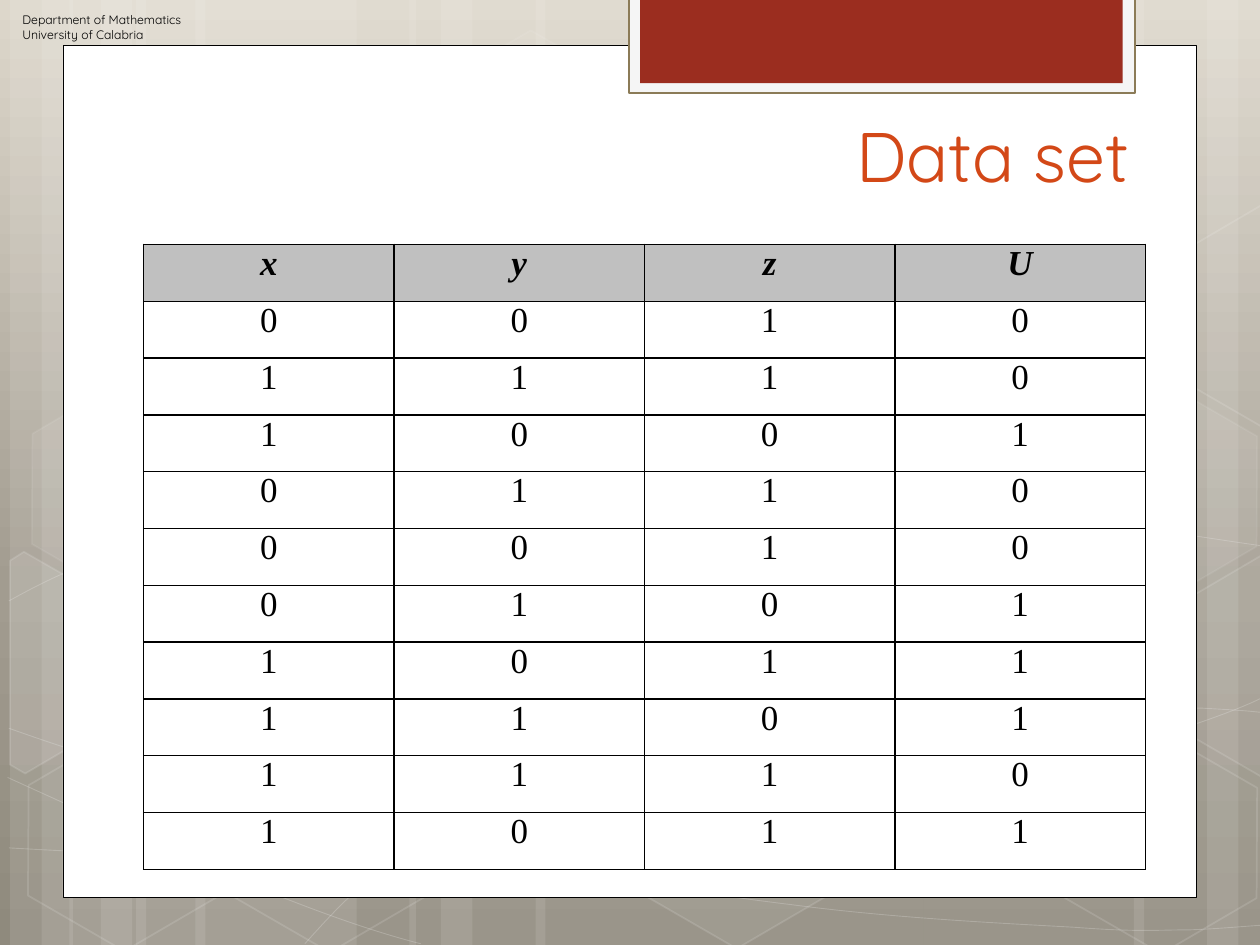
from lxml import etree
from copy import deepcopy
from pptx import Presentation
from pptx import util as u
from pptx.dml import color
from pptx.enum import shapes, text
from pptx.oxml import ns

PX = 9144  # 100 px to the inch
WIDE, HIGH = 1000, 750
SHAPE = shapes.MSO_SHAPE
SANS, SERIF = "Quicksand", "Times New Roman"
WHITE, BLACK = "FFFFFF", "000000"

BANDS = [(108, 175), (8, 50), (33, 83), (155, 175), (55, 50), (80, 83),
         (733, 175), (958, 50), (900, 83), (425, 308), (325, 50), (350, 83)]

# Each curve: a start, then three Bezier points for every stretch
CURVES = [
    [(7, 673), (61, 676), (115, 679), (190, 678), (265, 677), (358, 675), (458, 665),
     (558, 655), (700, 636), (792, 617), (883, 598), (977, 568), (1007, 551)],
    [(7, 477), (36, 461), (65, 446), (121, 431), (178, 416), (259, 394), (347, 387),
     (436, 380), (544, 379), (654, 387), (764, 395), (947, 426), (1007, 434)],
    [(6, 617), (127, 672), (247, 727), (334, 749)],
    [(7, 578), (38, 589), (70, 600), (128, 616), (186, 631), (273, 656), (357, 673),
     (440, 690), (545, 708), (628, 718), (711, 729), (800, 733), (853, 736),
     (905, 740), (919, 738), (945, 738), (971, 737), (989, 735), (1007, 734)],
    [(242, 749), (260, 729), (278, 709), (302, 691), (326, 673), (360, 653), (388, 639),
     (416, 625), (433, 619), (470, 609), (506, 599), (573, 585), (608, 578),
     (644, 571), (649, 571), (680, 569), (711, 566), (760, 563), (794, 562),
     (829, 561), (886, 562), (886, 562), (886, 562), (953, 562), (953, 562),
     (971, 563), (988, 564), (997, 565), (1006, 566), (1003, 565), (1006, 566)],
]

# Hexagons: left, top, fill opacity, line opacity
HEXES = [(334, 36, 4, 8), (497, 589, 6, 12), (11, 591, 0, 12), (14, 312, 7, 8),
         (174, 592, 0, 12), (834, 593, 0, 12), (834, 314, 7, 8)]

# Hexagons cut by the slide edge: corners, fill opacity
CUTS = [
    ([(8, 445), (19, 438), (96, 482), (95, 570), (20, 614), (8, 607)], 10),
    ([(926, 485), (1001, 441), (1009, 446), (1009, 613), (1002, 617), (926, 573)], 4),
    ([(926, 207), (1001, 163), (1010, 168), (1009, 335), (1002, 339), (926, 295)], 0),
]

HEAD = "xyzU"
ROWS = ["0010", "1110", "1001", "0110", "0010",
        "0101", "1011", "1101", "1110", "1011"]


def rgb(code):
    return color.RGBColor.from_string(code)


def emu(*nums):
    return [round(n * PX) for n in nums]


def fade(item, route, pct):
    """Set the opacity of the solid colour found under route."""
    tone = item.element.spPr.find(route + "a:solidFill/a:srgbClr", ns._nsmap)
    etree.SubElement(tone, ns.qn("a:alpha")).set("val", str(pct * 1000))


def paint(item, fill=None, line=None, width=1, solid=100, ink=100):
    item.shadow.inherit = False
    if fill:
        item.fill.solid()
        item.fill.fore_color.rgb = rgb(fill)
        if solid < 100:
            fade(item, "", solid)
    else:
        item.fill.background()
    if line:
        item.line.color.rgb = rgb(line)
        item.line.width = u.Pt(width)
        if ink < 100:
            fade(item, "a:ln/", ink)
    else:
        item.line.fill.background()


def block(slide, box, kind=SHAPE.RECTANGLE, **look):
    item = slide.shapes.add_shape(kind, *emu(*box))
    paint(item, **look)
    return item


def outline(slide, pts, close, **look):
    pts = [emu(*p) for p in pts]
    pen = slide.shapes.build_freeform(*pts[0], scale=1.0)
    pen.add_line_segments(pts[1:], close=close)
    item = pen.convert_to_shape()
    paint(item, **look)
    return item


def curve(slide, pts, **look):
    """Draw the knots as an open outline, then bend each side."""
    item = outline(slide, pts[::3], False, **look)
    sides = list(item.element.spPr.iter(ns.qn("a:lnTo")))
    for i, side in enumerate(sides):
        side.tag = ns.qn("a:cubicBezTo")
        for k, point in enumerate(pts[3 * i + 1:3 * i + 3]):
            x, y = emu(*point)
            spot = etree.Element(ns.qn("a:pt"), x=str(x - item.left), y=str(y - item.top))
            side.insert(k, spot)


def write(para, words, size, font, tone=BLACK, bold=False, slant=False):
    run = para.add_run()
    run.text = words
    face = run.font
    face.size, face.name = u.Pt(size), font
    face.bold, face.italic = bold, slant
    face.color.rgb = rgb(tone)


def label(slide, box, lines, size, tone=BLACK, align=text.PP_ALIGN.LEFT):
    frame = slide.shapes.add_textbox(*emu(*box)).text_frame
    frame.word_wrap = True
    for i, words in enumerate(lines):
        para = frame.add_paragraph() if i else frame.paragraphs[0]
        para.alignment = align
        write(para, words, size, SANS, tone)


def backdrop(slide, box):
    fill = slide.background.fill
    fill.gradient()
    fill.gradient_angle = 270
    first = slide.background._cSld.find(".//" + ns.qn("a:gs"))
    first.addnext(deepcopy(first))
    stops = zip(fill.gradient_stops, (0, 0.62, 1), ("DDD7CB", "A29C90", "8F8A7D"))
    for stop, place, tone in stops:
        stop.position = place
        stop.color.rgb = rgb(tone)

    x, y, _, h = box
    for left, w in BANDS:
        block(slide, (x + left, y, w, h), fill=WHITE, solid=10)
    for pts in CURVES:
        moved = [(x + a, y + b) for a, b in pts]
        curve(slide, moved, line=WHITE, width=0.5, ink=20)
    for left, top, solid, ink in HEXES:
        item = block(slide, (x + left, y + top, 175, 152), SHAPE.HEXAGON,
                     fill=WHITE if solid else None, solid=solid, line=WHITE, ink=ink)
        item.adjustments[0], item.adjustments[1] = 0.285, 1.155
        item.rotation = 30
    for pts, solid in CUTS:
        moved = [(x + a, y + b) for a, b in pts]
        outline(slide, moved, True, fill=WHITE if solid else None,
                solid=solid, line=WHITE, ink=12)


def panel(slide, box):
    """White sheet with the red tab hanging over its top edge."""
    x, y, _, _ = box
    block(slide, box, fill=WHITE, line=BLACK, width=0.5)
    block(slide, (x + 449, y - 38, 402, 76), fill="F5F5F5", line="8B7B57", width=1.25)
    block(slide, (x + 458, y - 38, 383, 68), fill="9B2D1F")


def border(cell):
    props = cell._tc.get_or_add_tcPr()
    for side in ("lnL", "lnR", "lnT", "lnB"):
        edge = etree.SubElement(props, ns.qn("a:" + side), w=str(u.Pt(1)))
        solid = etree.SubElement(edge, ns.qn("a:solidFill"))
        etree.SubElement(solid, ns.qn("a:srgbClr"), val=BLACK)


def grid(slide, box):
    table = slide.shapes.add_table(len(ROWS) + 1, len(HEAD), *emu(*box)).table
    table.first_row = table.horz_banding = False
    for r, row in enumerate([HEAD] + ROWS):
        top = r == 0
        for c, words in enumerate(row):
            cell = table.cell(r, c)
            cell.margin_left = cell.margin_right = 7 * PX
            cell.margin_top = cell.margin_bottom = 0
            border(cell)
            if top:
                cell.fill.solid()
                cell.fill.fore_color.rgb = rgb("C0C0C0")
            else:
                cell.fill.background()
            para = cell.text_frame.paragraphs[0]
            para.alignment = text.PP_ALIGN.CENTER
            write(para, words, 20, SERIF, bold=top, slant=top)


def main():
    deck = Presentation()
    deck.slide_width, deck.slide_height = emu(WIDE, HIGH)
    slide = deck.slides.add_slide(deck.slide_layouts[6])
    backdrop(slide, (0, 0, WIDE, HIGH))
    panel(slide, (50, 36, 900, 676))
    label(slide, (8, 5, 220, 34), ["Department of Mathematics", "University of Calabria"], 7)
    label(slide, (138, 84, 768, 125), ["Data set"], 40, "D34817", text.PP_ALIGN.RIGHT)
    grid(slide, (114, 194, 795, 496))
    deck.save("out.pptx")


if __name__ == "__main__":
    main()
